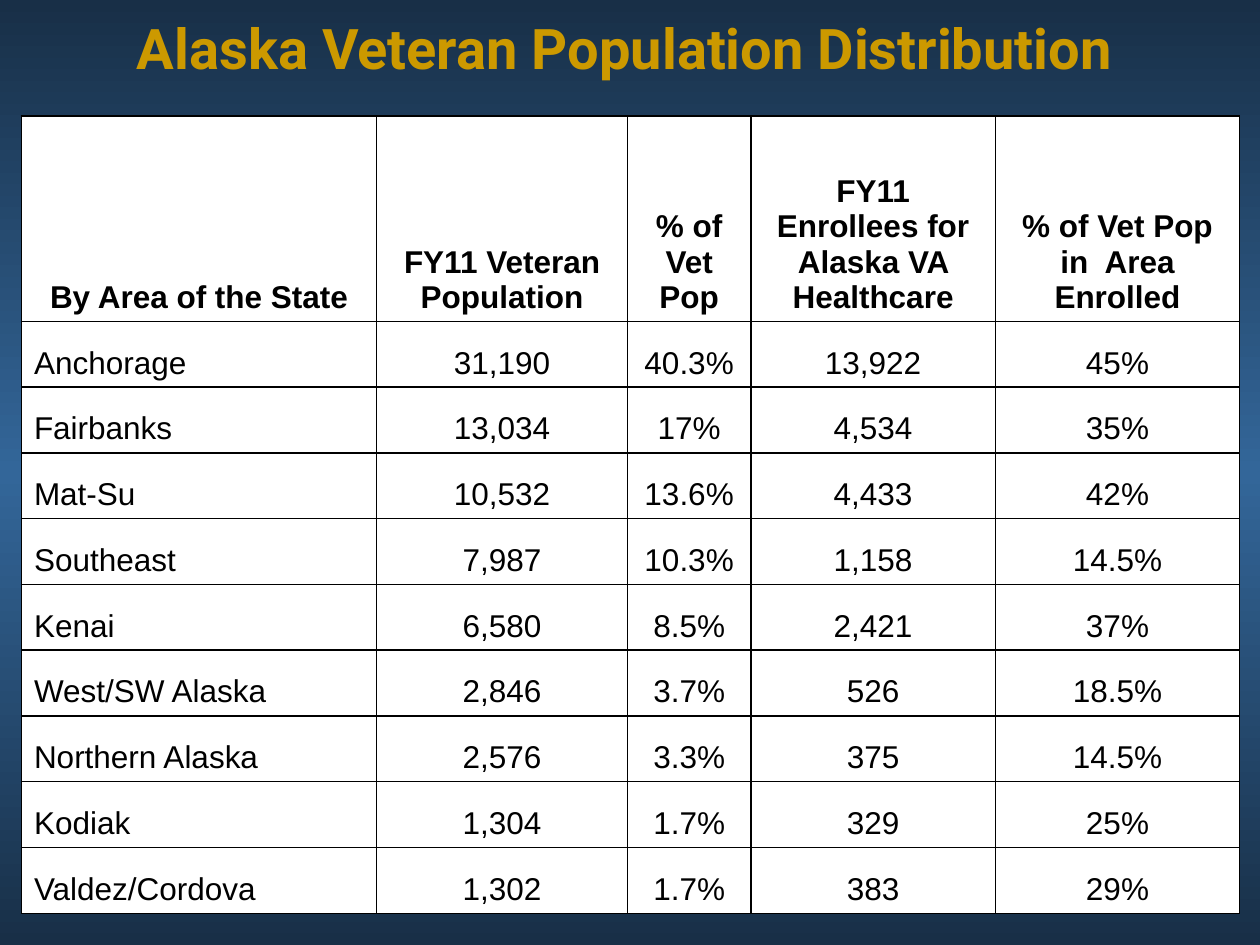
from copy import deepcopy

from pptx import Presentation
from pptx.dml.color import RGBColor
from pptx.enum.text import MSO_ANCHOR, PP_ALIGN
from pptx.oxml.ns import qn
from pptx.oxml.xmlchemy import OxmlElement
from pptx.util import Inches, Pt

COLORS = {
    "navy": "182F47",
    "blue": "336699",
    "gold": "CC9900",
    "black": "000000",
    "white": "FFFFFF",
}
HEADER = [
    "By Area of the State",
    "FY11 Veteran Population",
    "% of Vet Pop",
    "FY11 Enrollees for Alaska VA Healthcare",
    "% of Vet Pop in  Area Enrolled",
]
AREAS = [
    ["Anchorage", "31,190", "40.3%", "13,922", "45%"],
    ["Fairbanks", "13,034", "17%", "4,534", "35%"],
    ["Mat-Su", "10,532", "13.6%", "4,433", "42%"],
    ["Southeast", "7,987", "10.3%", "1,158", "14.5%"],
    ["Kenai", "6,580", "8.5%", "2,421", "37%"],
    ["West/SW Alaska", "2,846", "3.7%", "526", "18.5%"],
    ["Northern Alaska", "2,576", "3.3%", "375", "14.5%"],
    ["Kodiak", "1,304", "1.7%", "329", "25%"],
    ["Valdez/Cordova", "1,302", "1.7%", "383", "29%"],
]
COLUMN_WIDTHS = [2.82, 1.99, 0.98, 1.94, 1.94]
HEADER_HEIGHT = 1.63
TABLE_HEIGHT = 6.33


class SlideBuilder:
    title_font = "Roboto"
    table_font = "Arial"

    def __init__(self, page):
        self.page = page

    def color(self, name):
        return RGBColor.from_string(COLORS[name])

    def background(self, names):
        fill = self.page.background.fill
        fill.gradient()
        fill.gradient_angle = 270
        stop_list = next(self.page.element.iter(qn("a:gsLst")))
        while len(stop_list) < len(names):
            stop_list.append(deepcopy(stop_list[-1]))
        for index, (stop, name) in enumerate(zip(fill.gradient_stops, names)):
            stop.color.rgb = self.color(name)
            stop.position = index / (len(names) - 1)

    def format_text(self, paragraph, font, size, color, bold, align):
        paragraph.alignment = align
        for span in paragraph.runs:
            span.font.name = font
            span.font.size = Pt(size)
            span.font.bold = bold
            span.font.color.rgb = self.color(color)

    def title(self, text, left, top, width, height):
        box = self.page.shapes.title
        box.left, box.top = Inches(left), Inches(top)
        box.width, box.height = Inches(width), Inches(height)
        frame = box.text_frame
        frame.text = text
        frame.vertical_anchor = MSO_ANCHOR.MIDDLE
        frame.margin_top = 0
        frame.margin_bottom = Inches(0.5)
        self.format_text(frame.paragraphs[0], self.title_font, 32, "gold", True, PP_ALIGN.CENTER)

    def border(self, cell):
        properties = cell._tc.get_or_add_tcPr()
        for position, side in enumerate(("a:lnL", "a:lnR", "a:lnT", "a:lnB")):
            line = OxmlElement(side)
            line.set("w", str(Pt(1)))
            solid = OxmlElement("a:solidFill")
            tint = OxmlElement("a:srgbClr")
            tint.set("val", COLORS["black"])
            solid.append(tint)
            line.append(solid)
            properties.insert(position, line)

    def cell(self, cell, text, bold, align):
        cell.text_frame.text = text
        cell.vertical_anchor = MSO_ANCHOR.BOTTOM
        cell.fill.solid()
        cell.fill.fore_color.rgb = self.color("white")
        self.border(cell)
        self.format_text(cell.text_frame.paragraphs[0], self.table_font, 18, "black", bold, align)

    def table(self, rows, left, top):
        table = self.page.shapes.add_table(
            len(rows), len(COLUMN_WIDTHS), Inches(left), Inches(top),
            Inches(sum(COLUMN_WIDTHS)), Inches(TABLE_HEIGHT),
        ).table
        table.first_row = False
        table.horz_banding = False
        for column, width in zip(table.columns, COLUMN_WIDTHS):
            column.width = Inches(width)
        area_height = (TABLE_HEIGHT - HEADER_HEIGHT) / (len(rows) - 1)
        for row_index, values in enumerate(rows):
            is_header = row_index == 0
            table.rows[row_index].height = Inches(HEADER_HEIGHT if is_header else area_height)
            for column_index, text in enumerate(values):
                is_area_name = column_index == 0 and not is_header
                align = PP_ALIGN.LEFT if is_area_name else PP_ALIGN.CENTER
                self.cell(table.cell(row_index, column_index), text, is_header, align)


def main():
    deck = Presentation()
    deck.slide_width, deck.slide_height = Inches(10), Inches(7.5)
    builder = SlideBuilder(deck.slides.add_slide(deck.slide_layouts[5]))
    builder.background(["navy", "blue", "navy"])
    builder.title("Alaska Veteran Population Distribution", 0.25, 0.25, 9.42, 0.75)
    builder.table([HEADER] + AREAS, 0.17, 0.92)
    deck.save("out.pptx")


if __name__ == "__main__":
    main()
